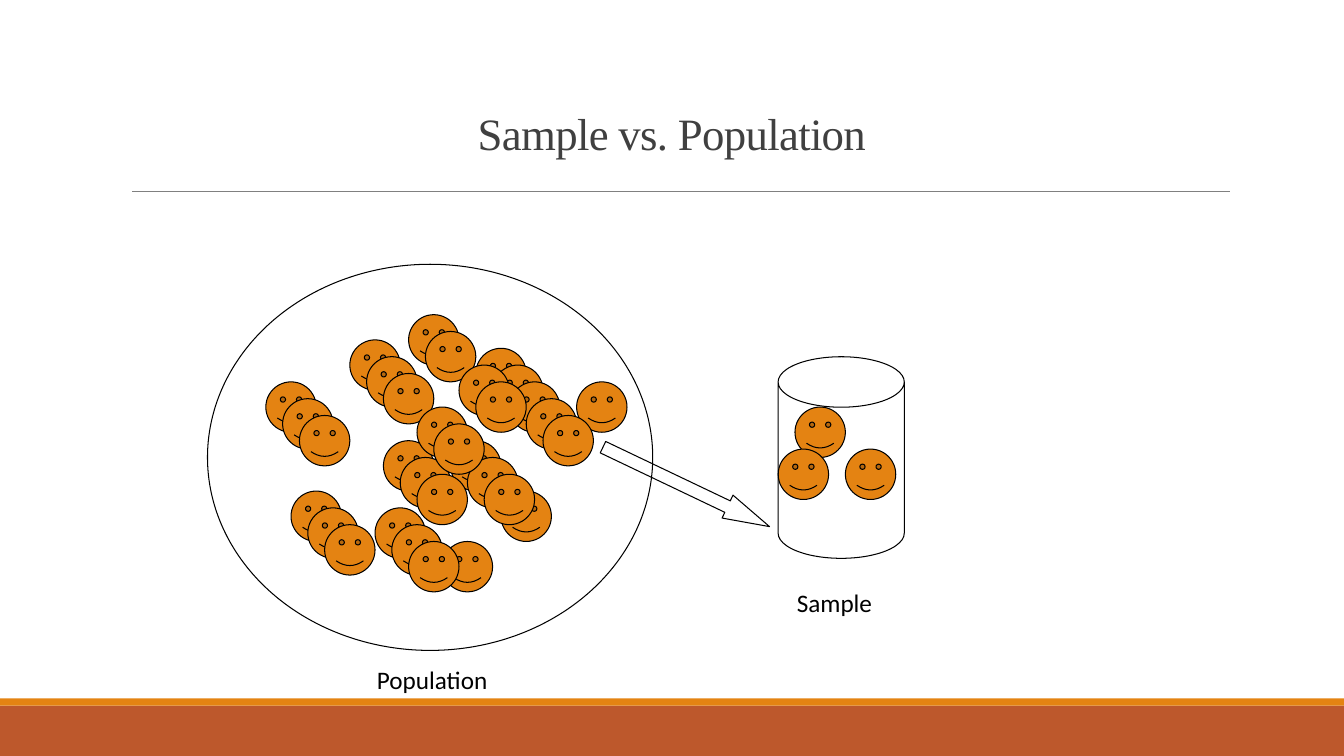
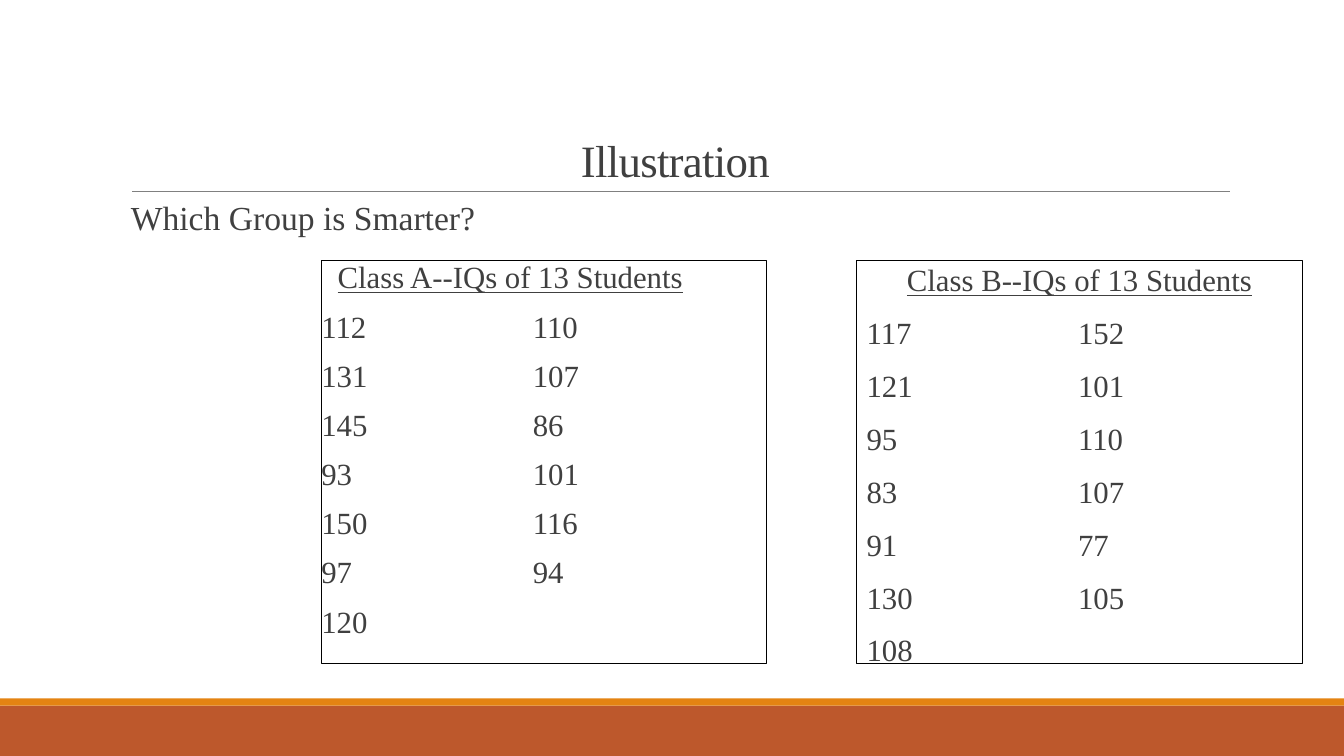
from lxml import etree
from pptx import Presentation
from pptx.dml.color import RGBColor
from pptx.enum import shapes, text
from pptx.oxml import ns
from pptx.util import Cm, Pt

COLORS = {"rust": "BD582C", "orange": "E48312", "rule": "808080",
          "title": "404040", "black": "000000"}
SERIF, SANS = "Times New Roman", "Calibri"
SHAPE = shapes.MSO_SHAPE

STEP = 2.54 / 12            # grid on which the people stand
CROWD_LEFT, CROWD_TOP = 6.7, 7.93
# Each queue runs diagonally: column and row of its first person, head count
QUEUES = [(10, 3, 3), (17, 0, 2), (28, 21, 1), (21, 27, 1), (37, 8, 1),
          (3, 21, 3), (0, 8, 3), (13, 23, 3), (22, 15, 3), (14, 15, 3),
          (18, 11, 2), (25, 4, 5), (23, 6, 2)]
SAMPLED = [(63, 11), (69, 16), (61, 16)]

CLASS_A = [(112, 110), (131, 107), (145, 86), (93, 101), (150, 116), (97, 94), (120,)]
CLASS_B = [(117, 152), (121, 101), (95, 110), (83, 107), (91, 77), (130, 105), (108,)]


def color(name):
    return RGBColor.from_string(COLORS[name])


def add_span(para, words, *, size=18, font=SANS, ink="black", underline=False, spacing=None):
    """Append a formatted run; spacing is in points."""
    span = para.add_run()
    span.text = words
    span.font.size = Pt(size)
    span.font.name = font
    span.font.color.rgb = color(ink)
    span.font.underline = underline
    if spacing is not None:
        span.font._element.set("spc", str(round(spacing * 100)))


class Deck:
    def __init__(self):
        self.deck = Presentation()
        self.deck.slide_width, self.deck.slide_height = Cm(33.87), Cm(19.05)
        self.page = None

    def new_page(self, title, left, top, width, height):
        """Start a slide with its bands, rule and bottom-anchored title."""
        self.page = self.deck.slides.add_slide(self.deck.slide_layouts[6])
        self.shape(SHAPE.RECTANGLE, 0, 17.78, 33.87, 1.27, fill="rust", line=None)
        self.shape(SHAPE.RECTANGLE, 0, 17.6, 33.87, 0.18, fill="orange", line=None)
        self.rule(3.33, 31, 4.83)
        self.label(title, left, top, width, height, anchor=text.MSO_ANCHOR.BOTTOM,
                   align=text.PP_ALIGN.CENTER, line_spacing=0.85,
                   size=32, font=SERIF, ink="title", spacing=-0.5)

    def shape(self, kind, left, top, width, height, fill=None, line="black", adjust=()):
        shape = self.page.shapes.add_shape(kind, Cm(left), Cm(top), Cm(width), Cm(height))
        shape.shadow.inherit = False
        if fill:
            shape.fill.solid()
            shape.fill.fore_color.rgb = color(fill)
        else:
            shape.fill.background()
        if line:
            shape.line.color.rgb = color(line)
            shape.line.width = Pt(0.75)
        else:
            shape.line.fill.background()
        for index, value in enumerate(adjust):
            shape.adjustments[index] = value
        return shape

    def rule(self, left, right, top):
        rule = self.page.shapes.add_connector(
            shapes.MSO_CONNECTOR.STRAIGHT, Cm(left), Cm(top), Cm(right), Cm(top))
        rule.line.color.rgb = color("rule")
        rule.line.width = Pt(0.5)
        etree.SubElement(rule._element.spPr, ns.qn("a:effectLst"))

    def label(self, words, left, top, width, height, anchor=text.MSO_ANCHOR.TOP,
              align=text.PP_ALIGN.LEFT, line_spacing=None, **style):
        box = self.page.shapes.add_textbox(Cm(left), Cm(top), Cm(width), Cm(height))
        box.text_frame.word_wrap = True
        box.text_frame.vertical_anchor = anchor
        para = box.text_frame.paragraphs[0]
        para.alignment = align
        para.line_spacing = line_spacing
        add_span(para, words, **style)

    def person(self, column, row):
        self.shape(SHAPE.SMILEY_FACE, CROWD_LEFT + column * STEP, CROWD_TOP + row * STEP,
                   1.27, 1.27, fill="orange")

    def score_box(self, heading, rows, left, line_spacing, inset, heading_tail=""):
        """Outlined box with an underlined heading over rows of scores."""
        box = self.shape(SHAPE.RECTANGLE, left, 6.56, 11.23, 10.16)
        frame = box.text_frame
        frame.word_wrap = True
        frame.vertical_anchor = text.MSO_ANCHOR.TOP
        frame.margin_left = frame.margin_right = Cm(inset)
        style = {"size": 22, "font": SERIF, "ink": "title"}
        for index, words in enumerate([heading] + ["\t\t".join(map(str, row)) for row in rows]):
            first = index == 0
            para = frame.paragraphs[0] if first else frame.add_paragraph()
            props = para._p.get_or_add_pPr()
            for name, length in (("marL", 0.25), ("indent", -0.25), ("defTabSz", 2.54)):
                props.set(name, str(Cm(length)))
            para.alignment = text.PP_ALIGN.CENTER if first else text.PP_ALIGN.LEFT
            para.line_spacing = line_spacing
            para.space_before = Pt(0 if first else 12)
            para.space_after = Pt(2)
            add_span(para, words, underline=first, **style)
            if first and heading_tail:
                add_span(para, heading_tail, **style)


def draw_sampling(show):
    show.new_page("Sample vs. Population", 6.45, 0.53, 20.96, 3.61)
    show.label("Population", 9.25, 16.61, 4.65, 1.02)
    show.shape(SHAPE.OVAL, 5.23, 6.66, 11.22, 9.73)
    for column, row, count in QUEUES:
        for place in range(count):
            show.person(column + 2 * place, row + 2 * place)
    for column, row in SAMPLED:
        show.person(column, row)
    arrow = show.shape(SHAPE.RIGHT_ARROW, 14.97, 11.95, 4.65, 0.64, adjust=(0.5, 1.83))
    arrow.rotation = 25.5
    show.label("Sample", 19.83, 14.68, 2.74, 1.02)
    show.shape(SHAPE.CAN, 19.61, 8.99, 3.18, 5.08, adjust=(0.4,))


def draw_classes(show):
    show.new_page("Illustration", 3.05, 0.79, 27.94, 4.04)
    show.label("Which Group is Smarter?", 3.05, 4.83, 19.69, 1.27,
               size=24, font=SERIF, ink="title")
    show.score_box("Class A--IQs of 13 Students", CLASS_A, 8.1, 0.8, 0, heading_tail="\t")
    show.score_box("Class B--IQs of 13 Students", CLASS_B, 21.59, 0.9, 0.25)


def main():
    show = Deck()
    draw_sampling(show)
    draw_classes(show)
    show.deck.save("out.pptx")


if __name__ == "__main__":
    main()
